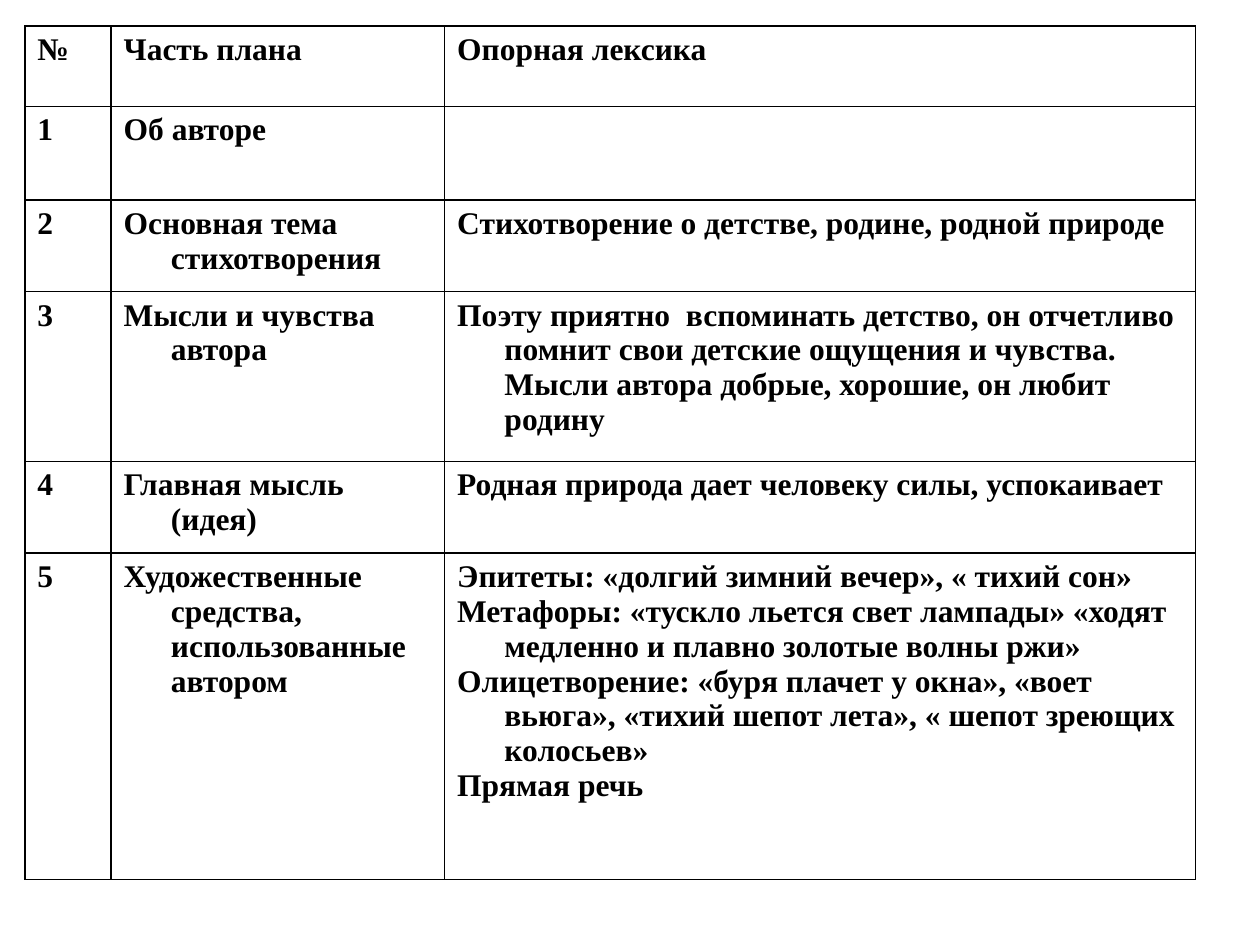
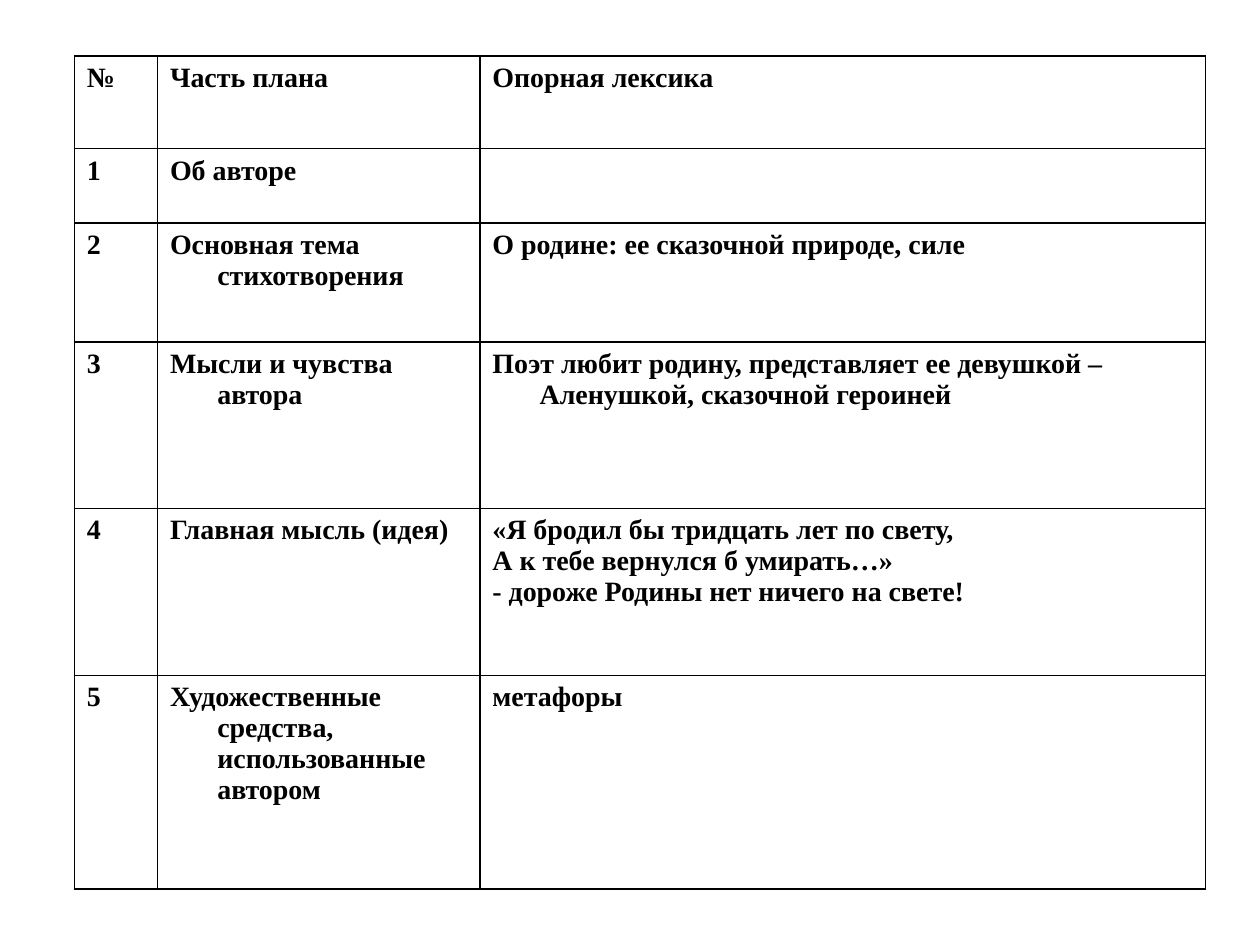
from lxml import etree
from pptx import Presentation
from pptx.dml.color import RGBColor
from pptx.oxml import ns
from pptx.util import Pt

BLACK = RGBColor(0, 0, 0)
WHITE = RGBColor(255, 255, 255)
FONT = "Times New Roman"
HANG = Pt(27)

# First two columns, the same in both plans
HEADER = ("№", "Часть плана", "Опорная лексика")
PLAN_PARTS = (
    "Об авторе",
    "Основная тема стихотворения",
    "Мысли и чувства автора",
    "Главная мысль (идея)",
    "Художественные средства, использованные автором",
)

# Third column: one string per plan part, one line per paragraph
CHILDHOOD_WORDS = (
    "",
    "Стихотворение о детстве, родине, родной природе",
    "Поэту приятно  вспоминать детство, он отчетливо помнит свои детские "
    "ощущения и чувства. Мысли автора добрые, хорошие, он любит родину",
    "Родная природа дает человеку силы, успокаивает",
    "Эпитеты: «долгий зимний вечер», « тихий сон»\n"
    "Метафоры: «тускло льется свет лампады» «ходят медленно и плавно "
    "золотые волны ржи»\n"
    "Олицетворение: «буря плачет у окна», «воет вьюга», «тихий шепот лета», "
    "« шепот зреющих колосьев»\n"
    "Прямая речь",
)
HOMELAND_WORDS = (
    "",
    "О родине: ее сказочной природе, силе",
    "Поэт любит родину, представляет ее девушкой – Аленушкой, "
    "сказочной героиней",
    "«Я бродил бы тридцать лет по свету,\n"
    "А к тебе вернулся б умирать…»\n"
    "- дороже Родины нет ничего на свете!",
    "метафоры",
)


def add_borders(cell):
    """Draw a thin black line on all four sides of a cell."""
    tc_pr = cell._tc.get_or_add_tcPr()
    for side in ("a:lnL", "a:lnR", "a:lnT", "a:lnB"):
        ln = etree.SubElement(tc_pr, ns.qn(side), w=str(Pt(1)))
        fill = etree.SubElement(ln, ns.qn("a:solidFill"))
        etree.SubElement(fill, ns.qn("a:srgbClr"), val=str(BLACK))


def fill_cell(cell, content, size):
    add_borders(cell)
    cell.fill.solid()
    cell.fill.fore_color.rgb = WHITE
    cell.text = content
    for p in cell.text_frame.paragraphs:
        p.font.name = FONT
        p.font.size = Pt(size)
        p.font.bold = True
        p.font.color.rgb = BLACK
        # Hanging indent
        p_pr = p._p.get_or_add_pPr()
        p_pr.set("marL", str(HANG))
        p_pr.set("indent", str(-HANG))


def add_plan_slide(prs, words, left, top, widths, heights, size):
    s = prs.slides.add_slide(prs.slide_layouts[6])
    rows = [HEADER]
    for number, (part, lexis) in enumerate(zip(PLAN_PARTS, words), 1):
        rows.append((str(number), part, lexis))

    table = s.shapes.add_table(
        len(rows), len(HEADER), Pt(left), Pt(top),
        Pt(sum(widths)), Pt(sum(heights))).table
    table.first_row = False
    table.horz_banding = False
    for column, width in zip(table.columns, widths):
        column.width = Pt(width)
    for row, height, contents in zip(table.rows, heights, rows):
        row.height = Pt(height)
        for cell, content in zip(row.cells, contents):
            fill_cell(cell, content, size)


def main():
    prs = Presentation()
    prs.slide_width, prs.slide_height = Pt(720), Pt(540)

    # Poem about childhood
    add_plan_slide(prs, CHILDHOOD_WORDS, 14.2, 15, (49.3, 190.6, 429.1),
                   (45.8, 53.5, 52.4, 97, 52.4, 186.5), 18)
    # Poem about the homeland
    add_plan_slide(prs, HOMELAND_WORDS, 42.5, 32, (47.5, 184.2, 414.7),
                   (53, 42.4, 68, 95.2, 95.4, 122.2), 16)

    prs.save("out.pptx")


if __name__ == "__main__":
    main()
